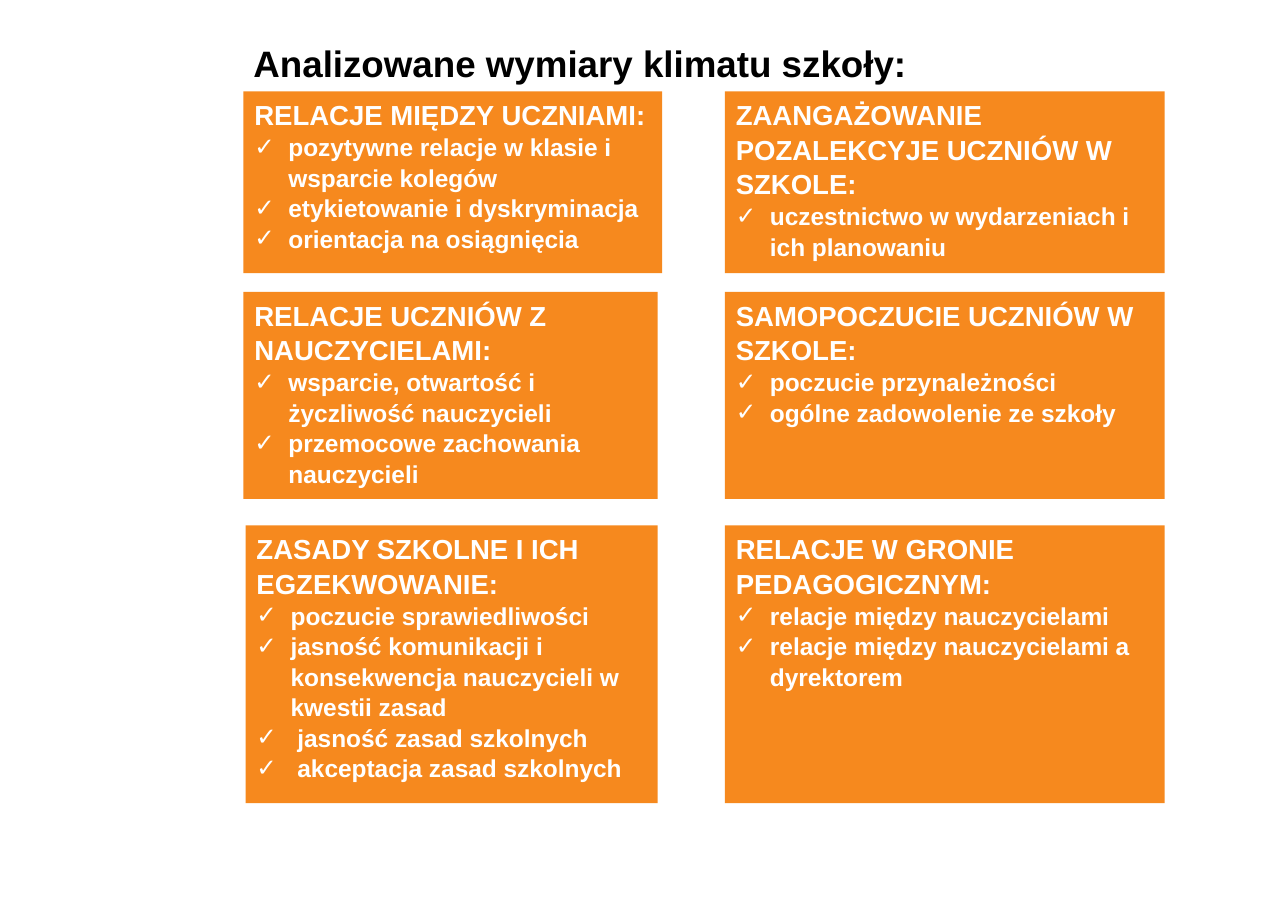
from lxml import etree
from pptx import Presentation
from pptx.dml.color import RGBColor
from pptx.enum.shapes import MSO_SHAPE
from pptx.enum.text import MSO_ANCHOR, PP_ALIGN
from pptx.oxml.ns import qn
from pptx.util import Inches, Pt

RECT = MSO_SHAPE.RECTANGLE
TOP, MIDDLE = MSO_ANCHOR.TOP, MSO_ANCHOR.MIDDLE
LEFT = PP_ALIGN.LEFT
FONT, ORANGE, WHITE, BLACK = "Arial", "F6891E", "FFFFFF", "000000"
INDENT = 0.31

ROWS = [(0.83, 1.65), (2.65, 1.88), (4.77, 2.52)]
LEFT_COLUMN = [
    (2.21, 3.8, "RELACJE MIĘDZY UCZNIAMI:",
     ["pozytywne relacje w klasie i wsparcie kolegów",
      "etykietowanie i dyskryminacja",
      "orientacja na osiągnięcia"]),
    (2.21, 3.76, "RELACJE UCZNIÓW Z NAUCZYCIELAMI:",
     ["wsparcie, otwartość i życzliwość nauczycieli",
      "przemocowe zachowania nauczycieli"]),
    (2.23, 3.74, "ZASADY SZKOLNE I ICH EGZEKWOWANIE:",
     ["poczucie sprawiedliwości",
      "jasność komunikacji i konsekwencja nauczycieli w kwestii zasad",
      " jasność zasad szkolnych",
      " akceptacja zasad szkolnych"]),
]
RIGHT_COLUMN = [
    (6.58, 3.99, "ZAANGAŻOWANIE POZALEKCYJE UCZNIÓW W SZKOLE:",
     ["uczestnictwo w wydarzeniach i ich planowaniu"]),
    (6.58, 3.99, "SAMOPOCZUCIE UCZNIÓW W SZKOLE:",
     ["poczucie przynależności",
      "ogólne zadowolenie ze szkoły"]),
    (6.58, 3.99, "RELACJE W GRONIE PEDAGOGICZNYM:",
     ["relacje między nauczycielami",
      "relacje między nauczycielami a dyrektorem"]),
]


def rgb(value):
    """Turn a hex string into a colour."""
    return RGBColor.from_string(value)


def add_check(p):
    """Give a paragraph a hanging check mark."""
    pPr = p._p.get_or_add_pPr()
    pPr.set("marL", str(Inches(INDENT)))
    pPr.set("indent", str(-Inches(INDENT)))
    etree.SubElement(pPr, qn("a:buFont")).set("typeface", FONT)
    etree.SubElement(pPr, qn("a:buChar")).set("char", "✓")


def write(p, text, size, color=WHITE, spacing=1.04, check=False):
    """Write one bold, left-aligned paragraph."""
    p.alignment = LEFT
    p.line_spacing = spacing
    if check:
        add_check(p)
    r = p.add_run()
    r.text = text
    r.font.name = FONT
    r.font.size = Pt(size)
    r.font.bold = True
    r.font.color.rgb = rgb(color)


def add_title(s, text):
    """Place and fill the title placeholder."""
    sp = s.shapes.title
    sp.left, sp.top = Inches(2.3), Inches(0.35)
    sp.width, sp.height = Inches(8.81), Inches(0.49)
    tf = sp.text_frame
    tf.margin_left = tf.margin_right = tf.margin_top = tf.margin_bottom = 0
    tf.vertical_anchor = MIDDLE
    tf.word_wrap = True
    write(tf.paragraphs[0], text, 24, color=BLACK, spacing=0.9)


def add_card(s, x, y, w, h, heading, items):
    """Add an orange box with a heading and a checked list."""
    sp = s.shapes.add_shape(RECT, Inches(x), Inches(y), Inches(w), Inches(h))
    sp.shadow.inherit = False
    sp.fill.solid()
    sp.fill.fore_color.rgb = rgb(ORANGE)
    sp.line.fill.background()
    tf = sp.text_frame
    tf.word_wrap = True
    tf.vertical_anchor = TOP
    write(tf.paragraphs[0], heading, 18)
    for item in items:
        write(tf.add_paragraph(), item, 16, check=True)


def main():
    """Build the slide and save it."""
    prs = Presentation()
    prs.slide_width, prs.slide_height = Inches(11.69), Inches(8.27)
    s = prs.slides.add_slide(prs.slide_layouts[5])
    add_title(s, "Analizowane wymiary klimatu szkoły:")
    for column in (LEFT_COLUMN, RIGHT_COLUMN):
        for (y, h), (x, w, heading, items) in zip(ROWS, column):
            add_card(s, x, y, w, h, heading, items)
    prs.save("out.pptx")


if __name__ == "__main__":
    main()
